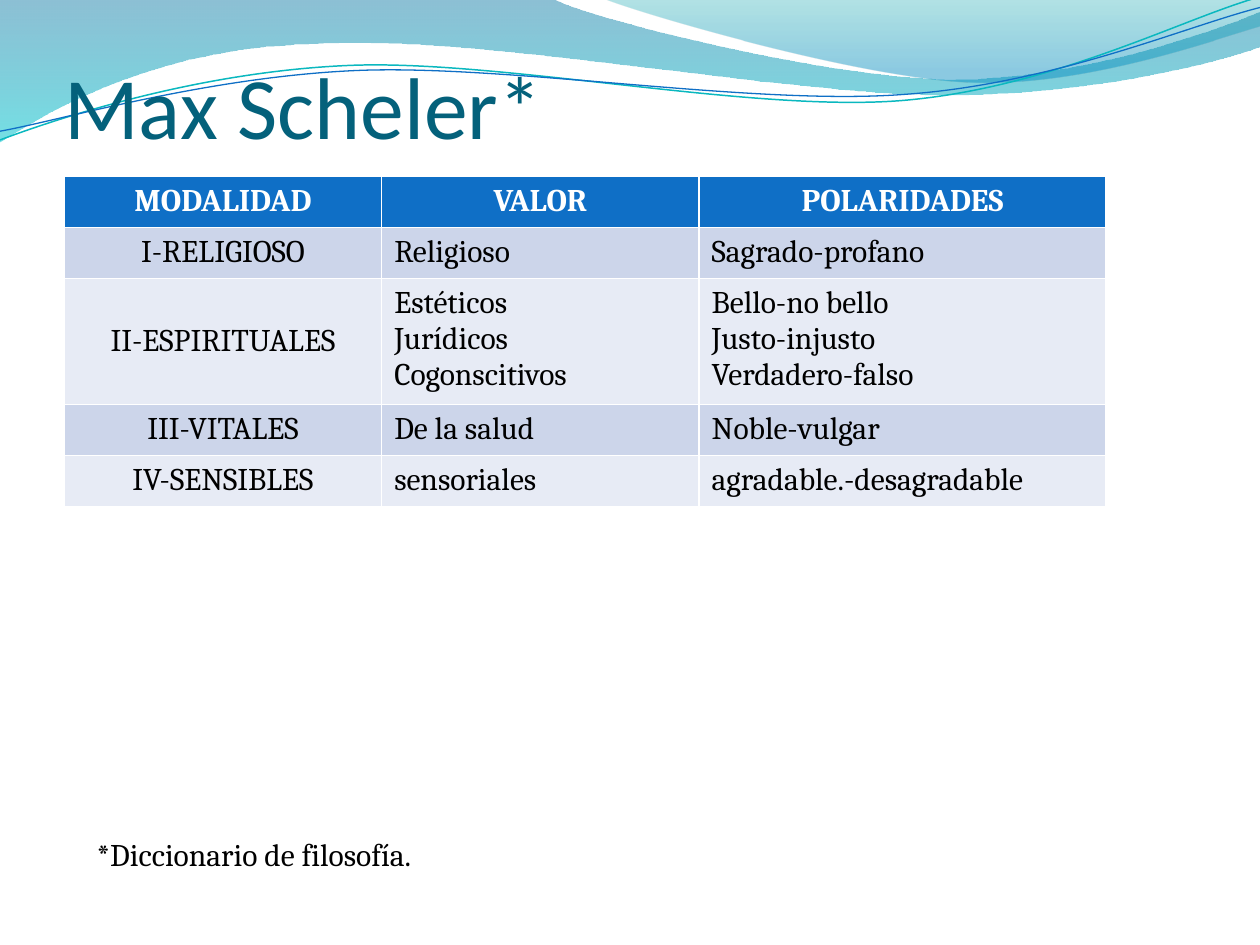
from math import cos, radians, sin

from lxml import etree
from pptx import Presentation
from pptx import util as u
from pptx.dml.color import RGBColor
from pptx.enum import text
from pptx.oxml.ns import qn

Pt = u.Pt
COLORS = {
    "title": "04617B", "ink": "000000", "white": "FFFFFF",
    "header": "0F6FC6", "band_dark": "CCD5EA", "band_light": "E7EBF5",
    "teal_line": "0AB8BF", "blue_line": "0F6FC6",
    "deep_blue": "0074A1", "cyan": "00C6CF", "sea": "00A1A9", "sky": "008BBF",
}

TITLE = "Max Scheler*"
FOOTNOTE = "*Diccionario de filosofía."
ROWS = [
    ("MODALIDAD", "VALOR", "POLARIDADES"),
    ("I-RELIGIOSO", "Religioso", "Sagrado-profano"),
    ("II-ESPIRITUALES", "Estéticos\nJurídicos\nCogonscitivos",
     "Bello-no bello\nJusto-injusto\nVerdadero-falso"),
    ("III-VITALES", "De la salud", "Noble-vulgar"),
    ("IV-SENSIBLES", "sensoriales", "agradable.-desagradable"),
]
COL_WIDTHS = [181.4, 181.4, 232.6]
ROW_HEIGHT = 29.2  # a row with more lines grows
TABLE_HEIGHT = 188.6

# Outlines: a pair is a straight step, six numbers are a Bézier step
WAVES = [  # outline, gradient stops (position, colour, opacity %)
    ([(0, 0), (317, -0.5), (343, 12, 478, 45, 546, 45),
      (614, 45, 690, 19, 720, 6.5), (721, 26), (708, 32, 626, 55, 537, 54),
      (448, 54, 275, 20, 185, 24.5), (93, 26, 33, 60, -0.7, 81.4)],
     [(0, "deep_blue", 45), (1, "cyan", 55)]),
    ([(345, -0.7), (366, 8, 491, 44.6, 554, 47),
      (619, 49.7, 692, 23, 720, 15), (720, 0)],
     [(0, "sea", 30), (0.8, "sky", 45)]),
]
CURVES = [  # outline, centre, colour, line width
    ([(0, 80), (34.6, 67, 113.8, 41, 199.4, 37.4),
      (284.4, 33.8, 427, 64, 513.4, 57.6),
      (599.8, 51, 675.4, 10.8, 718.6, -1.4)], (359.3, 41.4), "teal_line", 0.85),
    ([(0, 75), (33.8, 69, 118, 44, 203.8, 40.3),
      (290, 36.7, 429.8, 60.5, 516.2, 54),
      (602, 48.2, 677.5, 15, 720, 4.3)], (359.6, 42.5), "blue_line", 0.75),
]
TILT = -2.7


def rgb(name):
    return RGBColor.from_string(COLORS[name])


def turn(point, centre, angle):
    dx, dy = point[0] - centre[0], point[1] - centre[1]
    c, s = cos(radians(angle)), sin(radians(angle))
    return centre[0] + dx * c - dy * s, centre[1] + dx * s + dy * c


def add_outline(slide, steps, close, centre=(0, 0), tilt=0):
    """Draw the steps; each group of three points becomes a Bézier segment."""
    points = [turn(step[k:k + 2], centre, -tilt)
              for step in steps for k in range(0, len(step), 2)]
    points = [(Pt(x), Pt(y)) for x, y in points]
    builder = slide.shapes.build_freeform(*points[0])
    builder.add_line_segments(points[1:], close=close)
    sp = builder.convert_to_shape()
    sp.shadow.inherit = False
    sp.rotation = tilt
    segments = iter(list(sp._element.iter(qn("a:lnTo"))))
    for step in steps[1:]:
        first = next(segments)
        if len(step) == 6:
            first.tag = qn("a:cubicBezTo")
            for _ in range(2):
                extra = next(segments)
                first.append(extra[0])
                extra.getparent().remove(extra)
    return sp


def style(p, font, size, color, bold=False, align=text.PP_ALIGN.LEFT):
    p.alignment = align
    for r in p.runs:
        r.font.name, r.font.size, r.font.bold = font, Pt(size), bold
        r.font.color.rgb = rgb(color)


def add_text(slide, content, box, insets, anchor, font, size, color):
    sp = slide.shapes.add_textbox(*map(Pt, box))
    tf = sp.text_frame
    tf.word_wrap = True
    tf.vertical_anchor = anchor
    tf.margin_left, tf.margin_top, tf.margin_right, tf.margin_bottom = map(Pt, insets)
    tf.text = content
    style(tf.paragraphs[0], font, size, color)


prs = Presentation()
prs.slide_width, prs.slide_height = Pt(720), Pt(540)
slide = prs.slides.add_slide(prs.slide_layouts[6])

# Translucent waves
for steps, stops in WAVES:
    sp = add_outline(slide, steps, True)
    sp.line.fill.background()
    sp.fill.gradient()
    sp.fill.gradient_angle = 270
    for stop, (position, color, _) in zip(sp.fill.gradient_stops, stops):
        stop.position = position
        stop.color.rgb = rgb(color)
    for clr, (_, _, opacity) in zip(sp._element.iter(qn("a:srgbClr")), stops):
        etree.SubElement(clr, qn("a:alpha"), val=str(opacity * 1000))

# Thin curves
for steps, centre, color, width in CURVES:
    sp = add_outline(slide, steps, False, centre, TILT)
    sp.fill.background()
    sp.line.color.rgb = rgb(color)
    sp.line.width = Pt(width)

# Title
add_text(slide, TITLE, (36.7, 0, 648, 90), (0, 3.6, 0, 0),
         text.MSO_ANCHOR.BOTTOM, "Calibri", 50, "title")

# Table of values, with the white rules of the default table style
frame = slide.shapes.add_table(
    len(ROWS), len(COL_WIDTHS), Pt(36.7), Pt(100.8),
    Pt(sum(COL_WIDTHS)), Pt(TABLE_HEIGHT))
table = frame.table
for column, width in zip(table.columns, COL_WIDTHS):
    column.width = Pt(width)
for i, row in enumerate(ROWS):
    table.rows[i].height = Pt(ROW_HEIGHT)
    header = i == 0
    band = "header" if header else "band_dark" if i % 2 else "band_light"
    tall = any("\n" in content for content in row)
    for j, content in enumerate(row):
        cell = table.cell(i, j)
        cell.fill.solid()
        cell.fill.fore_color.rgb = rgb(band)
        if tall and j == 0:
            cell.vertical_anchor = text.MSO_ANCHOR.MIDDLE
        cell.text_frame.text = content
        centred = header or j == 0
        for p in cell.text_frame.paragraphs:
            style(p, "Cambria", 18, "white" if header else "ink", header,
                  text.PP_ALIGN.CENTER if centred else text.PP_ALIGN.LEFT)
frame.height = Pt(TABLE_HEIGHT)

# Footnote
add_text(slide, FOOTNOTE, (48.2, 473.8, 629.3, 29), (7.2, 3.6, 7.2, 3.6),
         text.MSO_ANCHOR.TOP, "Cambria", 18, "ink")

prs.save("out.pptx")
